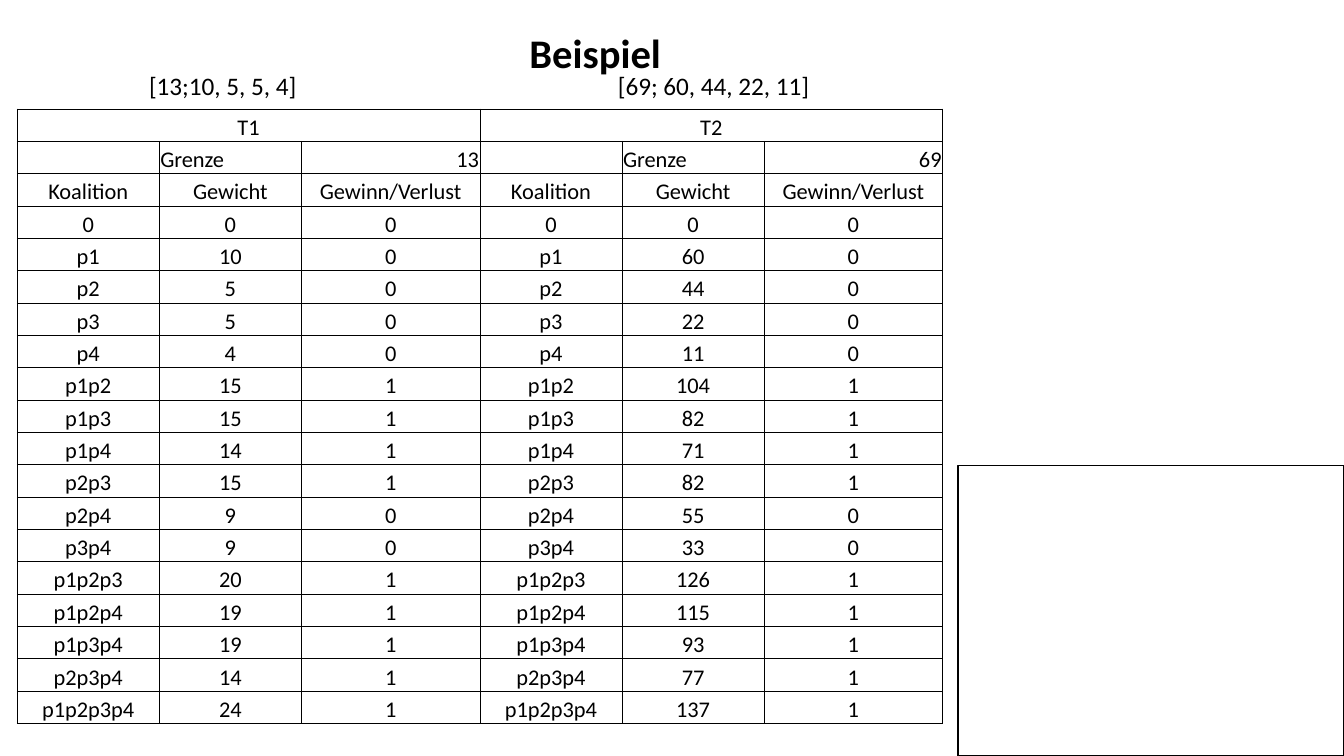
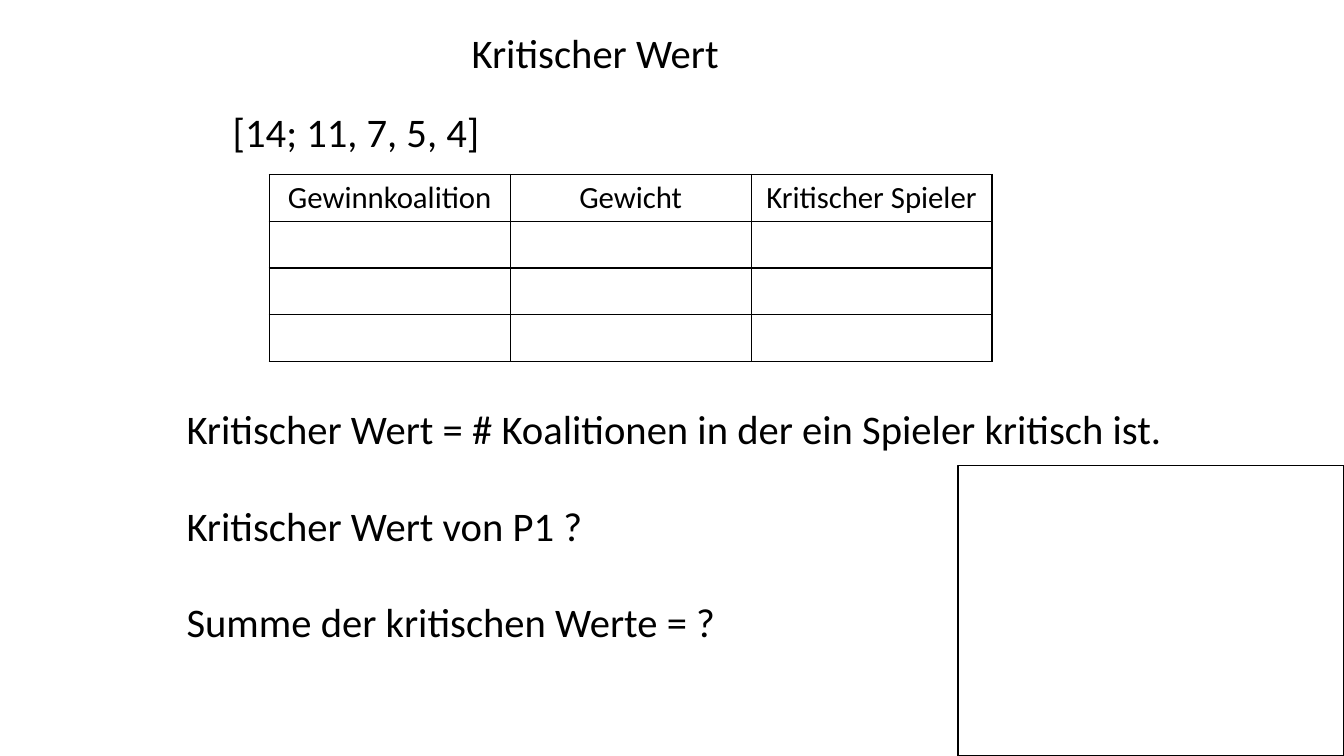
import dataclasses
import itertools

import lxml.etree
import pptx
import pptx.dml.color
import pptx.enum.shapes
import pptx.enum.text
import pptx.oxml.ns
import pptx.util

Inches = pptx.util.Inches
Pt = pptx.util.Pt
ALIGN = pptx.enum.text.PP_ALIGN
ANCHOR = pptx.enum.text.MSO_ANCHOR


@dataclasses.dataclass(frozen=True)
class Theme:
    font: str = "Calibri"
    ink: str = "000000"
    large: float = 29
    header: float = 22
    label: float = 18
    cell: float = 16
    paragraph_gap: float = 34
    frame_line: float = 1


@dataclasses.dataclass(frozen=True)
class Box:
    left: float
    top: float
    width: float
    height: float

    def inches(self):
        return [Inches(value) for value in dataclasses.astuple(self)]


THEME = Theme()
INK = pptx.dml.color.RGBColor.from_string(THEME.ink)
TITLE_BOX = Box(1.75, 0.11, 8.31, 0.81)
FRAME_BOX = Box(9.5, 4.62, 3.83, 2.88)
TITLE_AND_CONTENT, TITLE_ONLY = 1, 5

PLAYERS = ["p1", "p2", "p3", "p4"]
COALITIONS = ["0"] + ["".join(group) for size in range(1, 5)
                      for group in itertools.combinations(PLAYERS, size)]
# Title, limit, weight of each coalition
GAMES = [
    ("T1", 13, [0, 10, 5, 5, 4, 15, 15, 14, 15, 9, 9, 20, 19, 19, 14, 24]),
    ("T2", 69, [0, 60, 44, 22, 11, 104, 82, 71, 82, 55, 33, 126, 115, 93, 77, 137]),
]


def style_paragraph(para, size, align=ALIGN.LEFT, bold=False):
    para.alignment = align
    for span in para.runs:
        span.font.name = THEME.font
        span.font.size = Pt(size)
        span.font.bold = bold
        span.font.color.rgb = INK


def place(shape, box):
    shape.left, shape.top, shape.width, shape.height = box.inches()


def add_page(deck, layout, title, bold=False):
    page = deck.slides.add_slide(deck.slide_layouts[layout])
    shape = page.shapes.title
    place(shape, TITLE_BOX)
    frame = shape.text_frame
    frame.text = title
    frame.auto_size = pptx.enum.text.MSO_AUTO_SIZE.NONE
    frame.vertical_anchor = ANCHOR.MIDDLE
    frame.margin_left = frame.margin_right = Inches(0.09)
    frame.margin_top = frame.margin_bottom = Inches(0.04)
    style_paragraph(frame.paragraphs[0], THEME.large, ALIGN.CENTER, bold)
    return page


def add_label(page, box, text, size, wrap):
    frame = page.shapes.add_textbox(*box.inches()).text_frame
    frame.word_wrap = wrap
    frame.text = text
    style_paragraph(frame.paragraphs[0], size)


def add_frame(page):
    shape = page.shapes.add_shape(
        pptx.enum.shapes.MSO_SHAPE.RECTANGLE, *FRAME_BOX.inches())
    shape.shadow.inherit = False
    shape.fill.background()
    shape.line.color.rgb = INK
    shape.line.width = Pt(THEME.frame_line)


def add_borders(cell, width):
    properties = cell._tc.get_or_add_tcPr()
    for side in ("lnL", "lnR", "lnT", "lnB"):
        line = lxml.etree.SubElement(
            properties, pptx.oxml.ns.qn("a:" + side), w=str(Pt(width)))
        fill = lxml.etree.SubElement(line, pptx.oxml.ns.qn("a:solidFill"))
        lxml.etree.SubElement(fill, pptx.oxml.ns.qn("a:srgbClr"), val=THEME.ink)


def add_grid(page, box, rows, widths, size, border, margins, anchor):
    """Draw a ruled table with centred text; margins are side, top, bottom."""
    shape = page.shapes.add_table(len(rows), len(widths), *box.inches())
    table = shape.table
    table.first_row = table.horz_banding = False
    for column, width in zip(table.columns, widths):
        column.width = Inches(width)
    for row, texts in zip(table.rows, rows):
        row.height = Inches(box.height / len(rows))
        for cell, text in zip(row.cells, texts):
            add_borders(cell, border)
            cell.fill.background()
            cell.vertical_anchor = anchor
            side, cell.margin_top, cell.margin_bottom = map(Inches, margins)
            cell.margin_left = cell.margin_right = side
            cell.text = text
            style_paragraph(cell.text_frame.paragraphs[0], size, ALIGN.CENTER)
    return table


def game_rows(title, limit, weights):
    rows = [[title, "", ""], ["", "Grenze", str(limit)],
            ["Koalition", "Gewicht", "Gewinn/Verlust"]]
    for coalition, weight in zip(COALITIONS, weights):
        rows.append([coalition, str(weight), str(int(weight >= limit))])
    return rows


def add_games_table(page, box):
    first, second = [game_rows(*game) for game in GAMES]
    rows = [left + right for left, right in zip(first, second)]
    table = add_grid(page, box, rows, [1.41, 1.41, 1.77] * 2, THEME.cell,
                     0.5, (0.01, 0.01, 0), ANCHOR.BOTTOM)
    for start in (0, 3):
        table.cell(0, start).merge(table.cell(0, start + 2))
        for offset, align in ((1, ALIGN.LEFT), (2, ALIGN.RIGHT)):
            cell = table.cell(1, start + offset)
            cell.text_frame.paragraphs[0].alignment = align


def add_statements(page, box, texts):
    body = page.placeholders[1]
    place(body, box)
    frame = body.text_frame
    frame.text = "\n".join(texts)
    frame.auto_size = pptx.enum.text.MSO_AUTO_SIZE.NONE
    for index, para in enumerate(frame.paragraphs):
        properties = para._p.get_or_add_pPr()
        properties.set("marL", "0")
        properties.set("indent", "0")
        lxml.etree.SubElement(properties, pptx.oxml.ns.qn("a:buNone"))
        para.space_before = Pt(THEME.paragraph_gap if index else 0)
        style_paragraph(para, THEME.large)


def build_example(deck):
    page = add_page(deck, TITLE_ONLY, "Beispiel", bold=True)
    # Weighted systems above each half of the table
    add_label(page, Box(1.38, 0.65, 1.74, 0.4), "[13;10, 5, 5, 4]",
              THEME.label, wrap=False)
    add_label(page, Box(6.03, 0.65, 2.13, 0.4), "[69; 60, 44, 22, 11]",
              THEME.label, wrap=False)
    add_frame(page)
    add_games_table(page, Box(0.17, 1.08, 9.18, 6.1))


def build_critical_value(deck):
    page = add_page(deck, TITLE_AND_CONTENT, "Kritischer Wert")
    add_label(page, Box(2.21, 1.01, 7.39, 0.71), "[14; 11, 7, 5, 4]",
              THEME.large, wrap=True)
    # Table to be filled in
    header = ["Gewinnkoalition", "Gewicht", "Kritischer Spieler"]
    add_grid(page, Box(2.67, 1.73, 7.17, 1.85), [header] + [[""] * 3] * 3,
             [2.39] * 3, THEME.header, 1, (0.09, 0.05, 0.05), ANCHOR.TOP)
    # Definition and questions
    add_statements(page, Box(1.75, 3.96, 10.52, 2.5), [
        "Kritischer Wert = # Koalitionen in der ein Spieler kritisch ist.",
        "Kritischer Wert von P1 ?",
        "Summe der kritischen Werte = ?",
    ])
    add_frame(page)


def main():
    deck = pptx.Presentation()
    deck.slide_width, deck.slide_height = Inches(13.33), Inches(7.5)
    build_example(deck)
    build_critical_value(deck)
    deck.save("out.pptx")


if __name__ == "__main__":
    main()
